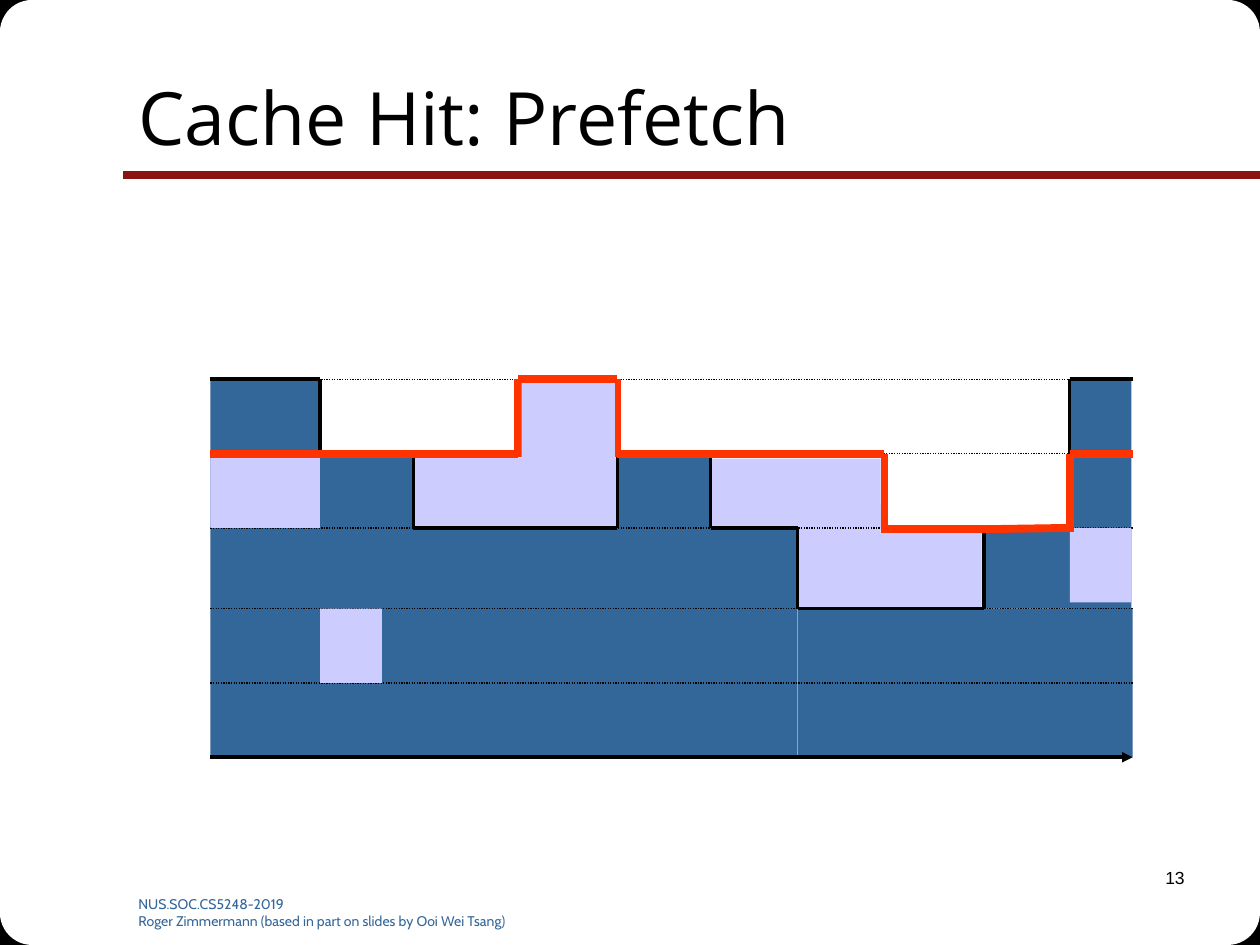
"""Build the cache hit prefetch slide: layered cache blocks and quality paths."""
import itertools

import pptx
import pptx.util
import pptx.dml.color
import pptx.enum.dml
import pptx.enum.shapes
import pptx.enum.text
import pptx.oxml.ns
from lxml import etree
from pptx.util import Inches, Pt

COLORS = {
    "black": "000000",
    "white": "FFFFFF",
    "rule": "891411",
    "cached": "336699",
    "prefetched": "CCCCFF",
    "played": "FF3300",
}
SHAPES = pptx.enum.shapes.MSO_SHAPE
ALIGN = pptx.enum.text.PP_ALIGN
ANCHOR = pptx.enum.text.MSO_ANCHOR
LEFT, RIGHT = 1.67, 8.99
LEVELS = [6.01, 5.42, 4.83, 4.19, 3.6, 3.01]
BASE, L1, L2, L3, L4, L5 = LEVELS

PREFETCH_BACK = [
    (5.65, 3.64, 1.34, 0.55),
    (6.34, 4.23, 1.45, 0.59),
    (6.34, 4, 0.65, 0.23),
    (3.29, 3.63, 1.61, 0.55),
]
CACHED = [
    (LEFT, L3, 4.66, 1.82),
    (6.33, L2, 2.66, 1.18),
    (LEFT, L5, 0.87, 1.18),
    (2.54, L4, 0.74, 0.59),
    (4.9, L4, 0.74, 0.59),
    (7.81, L3, 0.74, 0.64),
    (8.49, L5, 0.49, 2.16),
]
PREFETCH_FRONT = [
    (2.54, L2, 0.49, 0.59),
    (8.49, L3, 0.49, 0.59),
    (LEFT, L4, 0.87, 0.59),
]
CACHED_PATH = [
    (LEFT, L5), (2.54, L5), (2.54, L4), (3.28, L4), (3.28, L3), (4.9, L3),
    (4.9, L4), (5.64, L4), (5.64, L3), (6.33, L3), (6.33, L2), (7.81, L2),
    (7.81, L3), (8.49, L3), (8.49, L5), (RIGHT, L5),
]
PLAYED_PATH = [
    (LEFT, L4), (4.11, L4), (4.11, L5), (4.9, L5), (4.9, L4), (7.02, L4),
    (7.02, 4.2), (7.81, 4.2), (8.49, L3), (8.49, L4), (RIGHT, L4),
]


def rgb(name):
    """Return the named colour."""
    return pptx.dml.color.RGBColor.from_string(COLORS[name])


def add_block(s, box, fill, kind=SHAPES.RECTANGLE):
    """Add a filled shape without outline."""
    sp = s.shapes.add_shape(kind, *map(Inches, box))
    sp.shadow.inherit = False
    sp.fill.solid()
    sp.fill.fore_color.rgb = rgb(fill)
    sp.line.fill.background()


def add_line(s, start, end, color, width, dash=None, arrow=False):
    """Add a straight line, optionally dashed or with an arrowhead."""
    cx = s.shapes.add_connector(
        pptx.enum.shapes.MSO_CONNECTOR.STRAIGHT, *map(Inches, start + end))
    cx.line.color.rgb = rgb(color)
    cx.line.width = Pt(width)
    if dash:
        cx.line.dash_style = dash
    qn = pptx.oxml.ns.qn
    sp_pr = cx._element.spPr
    if arrow:
        etree.SubElement(sp_pr.find(qn("a:ln")), qn("a:tailEnd"), type="triangle")
    etree.SubElement(sp_pr, qn("a:effectLst"))


def add_path(s, points, color, width, overlap=0):
    """Join points with lines, lowering the foot of each vertical by the overlap."""
    for (x1, y1), (x2, y2) in itertools.pairwise(points):
        if x1 == x2:
            y1, y2 = min(y1, y2), max(y1, y2) + overlap
        add_line(s, (x1, y1), (x2, y2), color, width)


def add_run(p, text, font, size, color):
    """Add a formatted run to a paragraph."""
    r = p.add_run()
    r.text = text
    r.font.name = font
    r.font.size = Pt(size)
    r.font.color.rgb = rgb(color)


def add_text(s, box, lines, font, size, color, align=ALIGN.LEFT):
    """Add a text box with one paragraph per line."""
    tf = s.shapes.add_textbox(*map(Inches, box)).text_frame
    tf.word_wrap = True
    for i, line in enumerate(lines):
        p = tf.add_paragraph() if i else tf.paragraphs[0]
        p.alignment = align
        add_run(p, line, font, size, color)


def add_title(s, text):
    """Format the title placeholder and raise it above the frame."""
    sp = s.shapes.title
    sp.left, sp.top, sp.width, sp.height = map(Inches, (1, 0.3, 8.5, 1.25))
    tf = sp.text_frame
    tf.vertical_anchor = ANCHOR.MIDDLE
    p = tf.paragraphs[0]
    p.alignment = ALIGN.LEFT
    add_run(p, text, "Open Sans", 42, "black")
    sp._element.getparent().append(sp._element)


def add_frame(s):
    """Draw the rounded black corners and the rule under the title."""
    corners = list(itertools.product((0, 1), repeat=2))
    for size, fill, kind in ((0.43, "black", SHAPES.RECTANGLE),
                             (1.53, "white", SHAPES.ROUNDED_RECTANGLE)):
        for i, j in corners:
            box = (i * (10 - size), j * (7.5 - size), size, size)
            add_block(s, box, fill, kind)
    add_line(s, (10, 1.39), (0.98, 1.39), "rule", 4.5)


def add_diagram(s):
    """Draw the cache blocks, the level grid and both quality paths."""
    for boxes, fill in ((PREFETCH_BACK, "prefetched"), (CACHED, "cached")):
        for box in boxes:
            add_block(s, box, fill)
    add_line(s, (LEFT, BASE), (RIGHT, BASE), "black", 2, arrow=True)
    for y in LEVELS[1:]:
        add_line(s, (LEFT, y), (RIGHT, y), "black", 0.75,
                 dash=pptx.enum.dml.MSO_LINE.ROUND_DOT)
    add_path(s, CACHED_PATH, "black", 2)
    for box in PREFETCH_FRONT:
        add_block(s, box, "prefetched")
    add_path(s, PLAYED_PATH, "played", 4.5, overlap=0.03)
    add_block(s, (4.14, 3.04, 0.74, 0.61), "prefetched")


def main():
    """Build and save the slide."""
    prs = pptx.Presentation()
    prs.slide_width, prs.slide_height = Inches(10), Inches(7.5)
    s = prs.slides.add_slide(prs.slide_layouts[5])
    add_frame(s)
    add_text(s, (1, 7.06, 3.67, 0.28),
             ["NUS.SOC.CS5248-2019",
              "Roger Zimmermann (based in part on slides by Ooi Wei Tsang)"],
             "Cabin", 8, "cached")
    add_text(s, (7.42, 6.83, 2.08, 0.5), ["13"], "Arial", 10, "black", ALIGN.RIGHT)
    add_title(s, "Cache Hit: Prefetch")
    add_diagram(s)
    prs.save("out.pptx")


if __name__ == "__main__":
    main()
